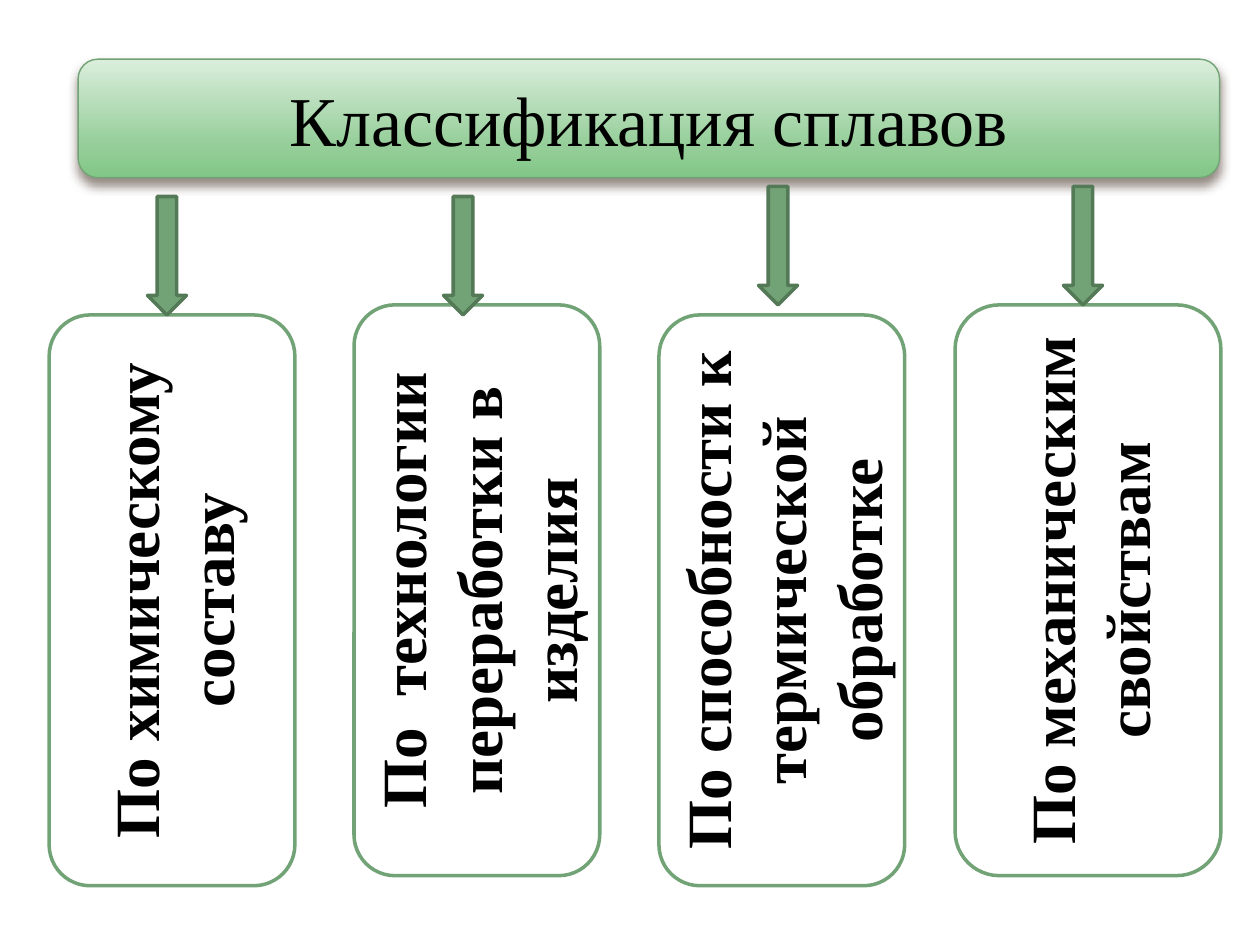
from copy import deepcopy

from pptx import Presentation
from pptx.dml.color import RGBColor
from pptx.enum.shapes import MSO_SHAPE
from pptx.enum.text import MSO_ANCHOR, PP_ALIGN
from pptx.oxml import parse_xml
from pptx.oxml.ns import nsdecls, qn
from pptx.util import Inches, Pt

COLORS = {
    "white": "FFFFFF",
    "text": "000000",
    "green": "72A376",
    "dark_green": "547957",
    "shadow": "4E3B30",
}
BANNER_STOPS = [(0, "DBEEDC"), (0.72, "96CE9A"), (1, "81C786")]
FONT = "Times New Roman"
CARD_HEIGHT = 4.53
ARROW_WIDTH, ARROW_HEIGHT = 0.31, 0.94

BRANCHES = [
    ("По химическому составу", 0.39, 2.5, 1.95, 1.17, 1.56),
    ("По  технологии переработки в изделия", 2.81, 2.42, 1.95, 3.52, 1.56),
    ("По способности к термической обработке", 5.23, 2.5, 1.95, 6.02, 1.48),
    ("По механическим свойствам", 7.58, 2.42, 2.11, 8.44, 1.48),
]


def rgb(name):
    return RGBColor.from_string(COLORS[name])


def add_block(slide, kind, box, fill, line, line_width):
    sp = slide.shapes.add_shape(kind, *map(Inches, box))
    sp.shadow.inherit = False
    sp.fill.solid()
    sp.fill.fore_color.rgb = rgb(fill)
    sp.line.color.rgb = rgb(line)
    sp.line.width = Pt(line_width)
    return sp


def write_text(sp, text, size, bold=False):
    tf = sp.text_frame
    tf.word_wrap = True
    tf.vertical_anchor = MSO_ANCHOR.MIDDLE
    p = tf.paragraphs[0]
    p.text = text
    p.alignment = PP_ALIGN.CENTER
    p.font.name = FONT
    p.font.size = Pt(size)
    p.font.bold = bold
    p.font.color.rgb = rgb("text")


def apply_gradient(sp, stops):
    sp.fill.gradient()
    sp.fill.gradient_angle = 270
    gs_list = sp._element.spPr.find(qn("a:gradFill")).find(qn("a:gsLst"))
    gs_list.append(deepcopy(gs_list[-1]))
    for stop, (position, color) in zip(sp.fill.gradient_stops, stops):
        stop.position = position
        stop.color.rgb = RGBColor.from_string(color)


def apply_shadow(sp):
    effects = sp._element.spPr.find(qn("a:effectLst"))
    effects.append(parse_xml(
        f'<a:outerShdw {nsdecls("a")} blurRad="{Pt(6)}" dist="{Pt(4)}" '
        f'dir="5400000" rotWithShape="0"><a:srgbClr val="{COLORS["shadow"]}">'
        '<a:alpha val="60000"/></a:srgbClr></a:outerShdw>'
    ))


def add_banner(slide, box, text):
    sp = add_block(slide, MSO_SHAPE.ROUNDED_RECTANGLE, box, "white", "green", 0.79)
    apply_gradient(sp, BANNER_STOPS)
    apply_shadow(sp)
    write_text(sp, text, 40)


def add_card(slide, box, text):
    sp = add_block(slide, MSO_SHAPE.ROUNDED_RECTANGLE, box, "white", "green", 2)
    write_text(sp, text, 36, bold=True)
    sp.text_frame._txBody.bodyPr.set("vert", "vert270")


def add_arrow(slide, box):
    add_block(slide, MSO_SHAPE.DOWN_ARROW, box, "green", "dark_green", 2)


def main():
    prs = Presentation()
    prs.slide_width, prs.slide_height = Inches(10), Inches(7.5)
    slide = prs.slides.add_slide(prs.slide_layouts[6])
    add_banner(slide, (0.62, 0.47, 9.06, 0.94), "Классификация сплавов")
    for text, left, top, width, arrow_left, arrow_top in BRANCHES:
        add_card(slide, (left, top, width, CARD_HEIGHT), text)
        add_arrow(slide, (arrow_left, arrow_top, ARROW_WIDTH, ARROW_HEIGHT))
    prs.save("out.pptx")


if __name__ == "__main__":
    main()
